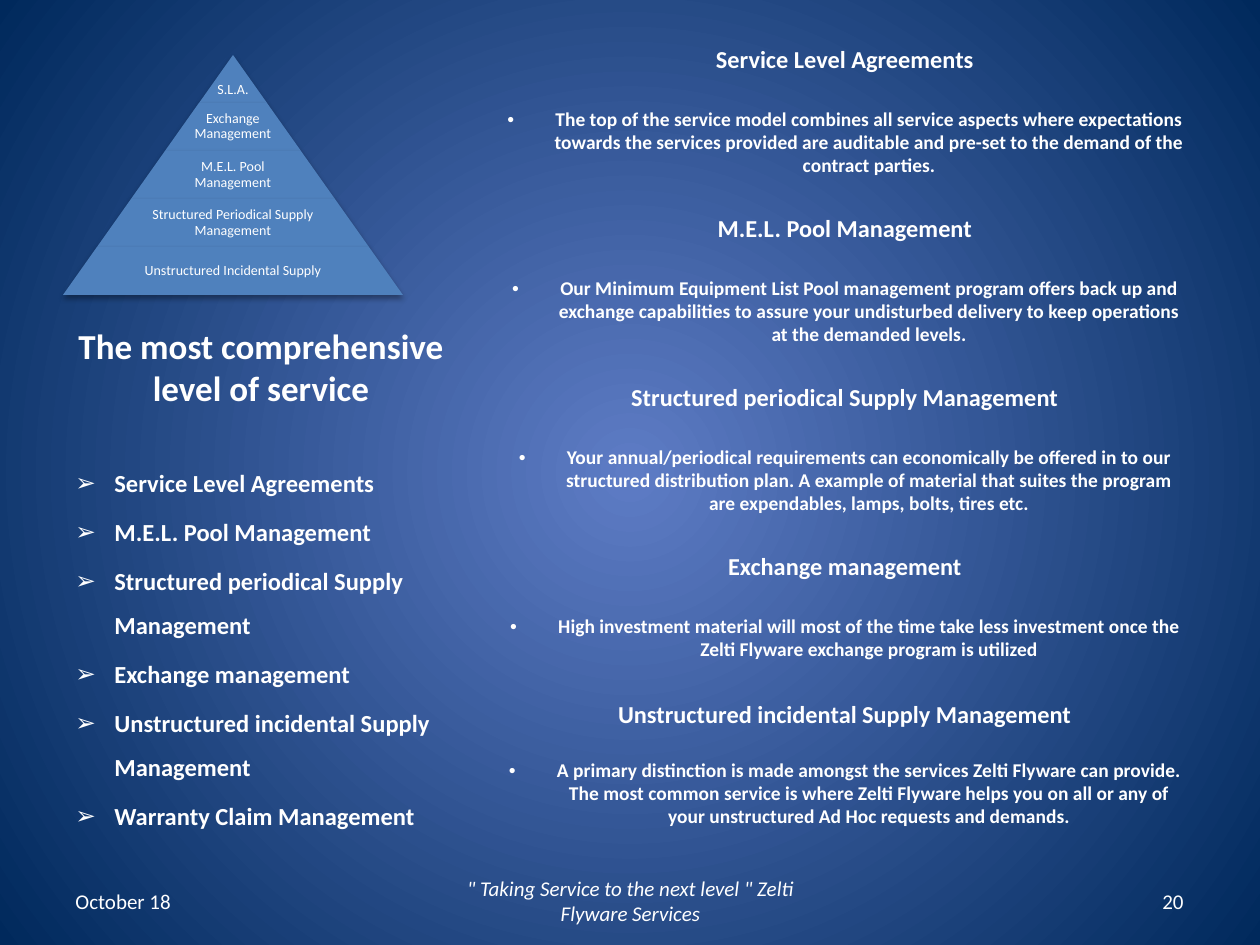
from lxml import etree
from pptx import Presentation
from pptx.dml.color import RGBColor
from pptx.enum.shapes import MSO_SHAPE
from pptx.enum.text import MSO_ANCHOR, PP_ALIGN
from pptx.oxml.ns import qn
from pptx.util import Pt

EMU_PER_PX = 914400 / 126
LEFT, CENTER, RIGHT = PP_ALIGN.LEFT, PP_ALIGN.CENTER, PP_ALIGN.RIGHT
TOP, MIDDLE, BOTTOM = MSO_ANCHOR.TOP, MSO_ANCHOR.MIDDLE, MSO_ANCHOR.BOTTOM
TRAPEZOID = MSO_SHAPE.TRAPEZOID

PYRAMID_LEVELS = [
    "S.L.A.",
    "Exchange Management",
    "M.E.L. Pool Management",
    "Structured Periodical Supply Management",
    "Unstructured Incidental Supply",
]
SERVICES = [
    "Service Level Agreements",
    "M.E.L. Pool Management",
    "Structured periodical Supply Management",
    "Exchange management",
    "Unstructured incidental Supply Management",
    "Warranty Claim Management",
]
# heading, description, points above the heading, points above the description
SECTIONS = [
    ("Service Level Agreements",
     "The top of the service model combines all service aspects where expectations towards "
     "the services provided are auditable and pre-set to the demand of the contract parties.",
     0, 20),
    ("M.E.L. Pool Management",
     "Our Minimum Equipment List Pool management program offers back up and exchange "
     "capabilities to assure your undisturbed delivery to keep operations at the demanded levels.",
     20.7, 20),
    ("Structured periodical Supply Management",
     "Your annual/periodical requirements can economically be offered in to our structured "
     "distribution plan. A example of material that suites the program are expendables, "
     "lamps, bolts, tires etc.",
     20.7, 20),
    ("Exchange management",
     "High investment material will most of the time take less investment once the "
     "Zelti Flyware exchange program is utilized",
     20.7, 20),
    ("Unstructured incidental Supply Management",
     "A primary distinction is made amongst the services Zelti Flyware can provide. "
     "The most common service is where Zelti Flyware helps you on all or any of your "
     "unstructured Ad Hoc requests and demands.",
     22, 17.4),
]


def px(length):
    return round(length * EMU_PER_PX)


def color(hex_string):
    return RGBColor.from_string(hex_string)


def add_child(parent, tag, **attributes):
    return etree.SubElement(parent, qn(tag), attributes)


def write(paragraph, text, size=12, bold=False, italic=False, align=LEFT,
          before=0, spacing=1.0, bullet=None, indent=0):
    paragraph.alignment = align
    paragraph.space_before = Pt(before)
    paragraph.line_spacing = spacing
    run = paragraph.add_run()
    run.text = text
    font = run.font
    font.name, font.size, font.bold, font.italic = Style.font, Pt(size), bold, italic
    font.color.rgb = color(Style.text)
    if bullet:
        properties = paragraph._p.get_or_add_pPr()
        properties.set("marL", str(px(indent)))
        properties.set("indent", str(-px(indent)))
        add_child(properties, "a:buFont", typeface="Arial")
        add_child(properties, "a:buChar", char=bullet)


class Style:
    font = "Calibri"
    text = "FFFFFF"
    level = "4F81BD"
    glow = "5E7CC5"
    edge = "00295C"

    def __init__(self, slide):
        self.slide = slide

    def background(self):
        """Radial gradient from the centre of the slide."""
        fill = self.slide.background.fill
        fill.gradient()
        for stop, shade in zip(fill.gradient_stops, (self.glow, self.edge)):
            stop.color.rgb = color(shade)
        linear = next(self.slide.element.iter(qn("a:lin")))
        gradient = linear.getparent()
        circle = etree.Element(qn("a:path"), {"path": "circle"})
        add_child(circle, "a:fillToRect", l="50000", t="50000", r="50000", b="50000")
        gradient.replace(linear, circle)

    def text_box(self, left, top, width, height, paragraphs, anchor=TOP, inset=None):
        """Each paragraph is a pair of its text and its format."""
        box = self.slide.shapes.add_textbox(px(left), px(top), px(width), px(height))
        frame = box.text_frame
        frame.word_wrap = True
        frame.vertical_anchor = anchor
        if inset is not None:
            frame.margin_left = frame.margin_right = px(inset)
            frame.margin_top = frame.margin_bottom = px(inset)
        for index, (text, text_format) in enumerate(paragraphs):
            paragraph = frame.add_paragraph() if index else frame.paragraphs[0]
            write(paragraph, text, **text_format)

    def trapezoid(self, left, top, width, height, slant):
        shape = self.slide.shapes.add_shape(
            TRAPEZOID, px(left), px(top), px(width), px(height))
        shape.adjustments[0] = slant / height
        shape.fill.solid()
        shape.fill.fore_color.rgb = color(self.level)
        shape.line.fill.background()
        shape.shadow.inherit = False
        effects = shape._element.spPr.find(qn("a:effectLst"))
        shadow = add_child(effects, "a:outerShdw", blurRad=str(Pt(3.1)),
                           dist=str(Pt(1.8)), dir="5400000", rotWithShape="0")
        shade = add_child(shadow, "a:srgbClr", val="000000")
        add_child(shade, "a:alpha", val="35000")

    def pyramid(self, center, top, height, slant, labels):
        for level, label in enumerate(labels, start=1):
            width = 2 * slant * level
            level_top = top + height * (level - 1)
            self.trapezoid(center - width / 2, level_top, width, height, slant)
            is_tip = level == 1
            label_width = width if is_tip else width * 0.65
            label_top = level_top + 11 if is_tip else level_top
            label_format = dict(size=8, align=CENTER, spacing=0.9)
            self.text_box(center - label_width / 2, label_top, label_width, height,
                          [(label, label_format)], MIDDLE, inset=1)


def main():
    presentation = Presentation()
    presentation.slide_width, presentation.slide_height = px(1260), px(945)
    slide = presentation.slides.add_slide(presentation.slide_layouts[6])
    style = Style(slide)
    style.background()

    style.text_box(54, 255, 414, 160, [
        ("The most comprehensive level of service", dict(size=20, bold=True, align=CENTER)),
    ], BOTTOM)

    details = []
    for heading, description, heading_gap, description_gap in SECTIONS:
        details.append((heading, dict(size=13.9, bold=True, align=CENTER, before=heading_gap)))
        details.append((description, dict(size=11.1, bold=True, align=CENTER, spacing=0.98,
                                          before=description_gap, bullet="•", indent=48)))
    style.text_box(493, 38, 704, 806, details)

    style.text_box(63, 403, 414, 441, [
        (service, dict(size=14, bold=True, before=2.8, spacing=1.5 if index else 3.0,
                       bullet="➢", indent=39))
        for index, service in enumerate(SERVICES)
    ])

    style.pyramid(center=233, top=55, height=48, slant=34, labels=PYRAMID_LEVELS)

    footers = [
        (63, 293, "October 18", dict(align=LEFT)),
        (431, 399, '" Taking Service to the next level " Zelti Flyware Services',
         dict(align=CENTER, italic=True)),
        (903, 293, "20", dict(align=RIGHT)),
    ]
    for left, width, text, text_format in footers:
        style.text_box(left, 876, width, 50, [(text, text_format)], MIDDLE)

    presentation.save("out.pptx")


if __name__ == "__main__":
    main()
